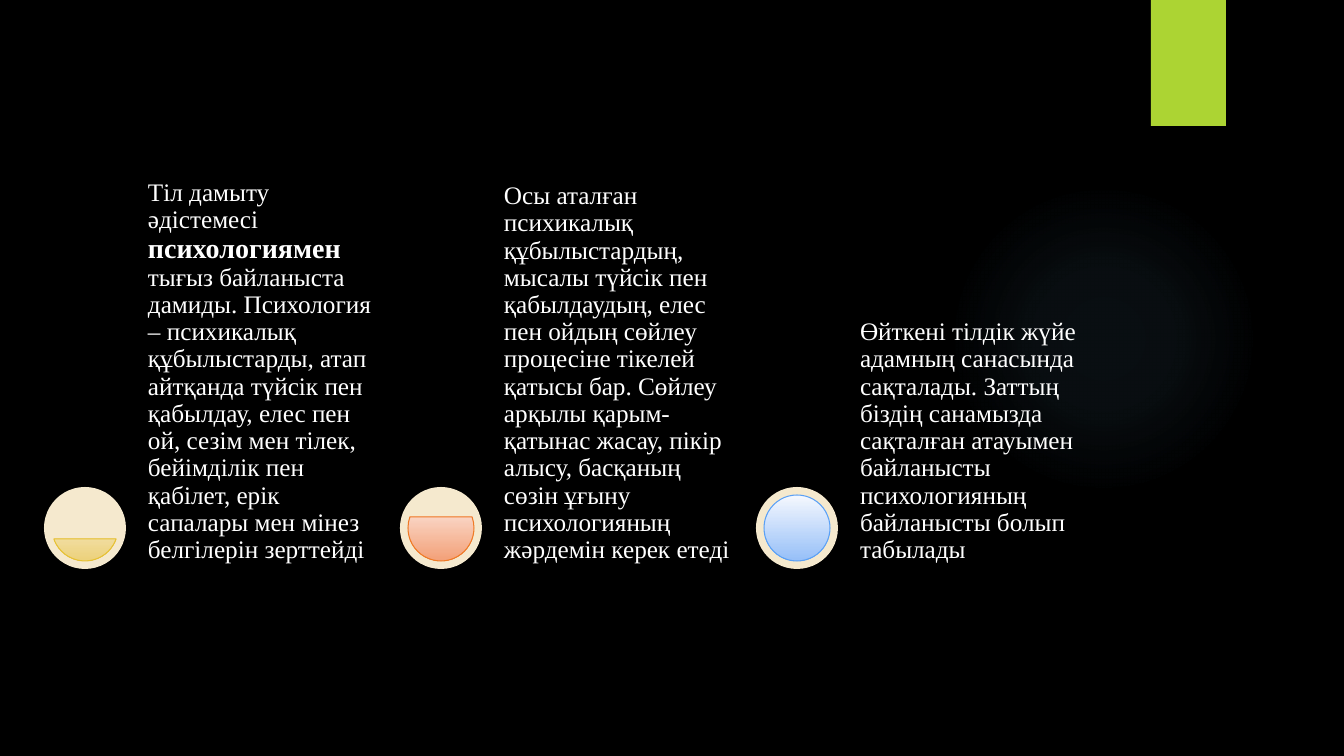
from math import asin, degrees

from pptx import Presentation
from pptx.dml.color import RGBColor
from pptx.enum.shapes import MSO_SHAPE as Shape
from pptx.enum.text import MSO_ANCHOR as Anchor
from pptx.oxml import parse_xml
from pptx.oxml.ns import nsdecls
from pptx.util import Pt

EMU_PER_PX = 914400 / 100.8

THEME = {
    "background": "000000", "accent": "ACD433", "glow": "7AC4F0",
    "disc": "F5E9CE", "text": "FFFFFF",
    "font": "Times New Roman", "body": 18, "strong": 20, "line": 0.75,
}

# level filled, gradient top, gradient bottom, outline, runs as (text, strong)
COLUMNS = [
    (1 / 3, "FAF4E5", "ECD17B", "E6C133", [
        ("Тіл дамыту әдістемесі ", False),
        ("психологиямен", True),
        (" тығыз байланыста дамиды. Психология – психикалық құбылыстарды, "
         "атап айтқанда түйсік пен қабылдау, елес пен ой, сезім мен тілек, "
         "бейімділік пен қабілет, ерік сапалары мен мінез белгілерін зерттейді", False),
    ]),
    (2 / 3, "FCEDE7", "F3A078", "EF7A24", [
        ("Осы аталған психикалық құбылыстардың, мысалы түйсік пен қабылдаудың, "
         "елес пен ойдың сөйлеу процесіне тікелей қатысы бар. Сөйлеу арқылы "
         "қарым-қатынас жасау, пікір алысу, басқаның сөзін ұғыну психологияның "
         "жәрдемін керек етеді", False),
    ]),
    (1, "F5F8FE", "96BFF8", "5AA0F5", [
        ("Өйткені тілдік жүйе адамның санасында сақталады. Заттың біздің "
         "санамызда сақталған атауымен байланысты психологияның байланысты "
         "болып табылады", False),
    ]),
]

LEFT, TOP, PITCH = 44, 487, 356
DISC, INSET = 82, 8
TEXT_OFFSET, TEXT_WIDTH = 99, 241


def px(*lengths):
    return [round(length * EMU_PER_PX) for length in lengths]


def add_plain_shape(kind, left, top, width, height, color):
    shape = page.shapes.add_shape(kind, *px(left, top, width, height))
    shape.shadow.inherit = False
    shape.line.fill.background()
    shape.fill.solid()
    shape.fill.fore_color.rgb = RGBColor.from_string(color)
    return shape


deck = Presentation()
deck.slide_width, deck.slide_height = px(1344, 756)
page = deck.slides.add_slide(deck.slide_layouts[6])
page.background.fill.solid()
page.background.fill.fore_color.rgb = RGBColor.from_string(THEME["background"])

# Faint radial glow and the corner tab
glow = add_plain_shape(Shape.OVAL, 949, 184, 310, 310, THEME["glow"])
stops = "".join(
    f'<a:gs pos="{position * 1000}"><a:srgbClr val="{THEME["glow"]}">'
    f'<a:alpha val="{alpha * 1000}"/></a:srgbClr></a:gs>'
    for position, alpha in [(0, 7), (36, 6), (69, 0)])
radial = parse_xml(
    f'<a:gradFill {nsdecls("a")} rotWithShape="1"><a:gsLst>{stops}</a:gsLst>'
    '<a:path path="circle"><a:fillToRect l="50000" t="50000" r="50000" b="50000"/>'
    '</a:path></a:gradFill>')
solid = glow.element.spPr.find("{*}solidFill")
solid.getparent().replace(solid, radial)
add_plain_shape(Shape.RECTANGLE, 1151, 0, 75, 126, THEME["accent"])

# Discs that fill up step by step, each with its text
for index, (level, light, dark, outline, runs) in enumerate(COLUMNS):
    left = LEFT + index * PITCH
    add_plain_shape(Shape.OVAL, left, TOP, DISC, DISC, THEME["disc"])

    size = DISC - 2 * INSET
    liquid = add_plain_shape(Shape.CHORD, left + INSET, TOP + INSET, size, size, dark)
    start = degrees(asin(1 - 2 * level))
    for side, angle in enumerate([start, 180 - start]):
        liquid.adjustments[side] = angle % 360 * 0.6
    liquid.fill.gradient()
    liquid.fill.gradient_angle = 270
    for stop, color in zip(liquid.fill.gradient_stops, [light, dark]):
        stop.color.rgb = RGBColor.from_string(color)
    liquid.line.color.rgb = RGBColor.from_string(outline)
    liquid.line.width = Pt(THEME["line"])

    box = page.shapes.add_textbox(*px(left + TEXT_OFFSET, TOP, TEXT_WIDTH, DISC))
    frame = box.text_frame
    frame.word_wrap = True
    frame.vertical_anchor = Anchor.BOTTOM
    (frame.margin_left, frame.margin_top,
     frame.margin_right, frame.margin_bottom) = px(5, 5, 5, 5)
    para = frame.paragraphs[0]
    para.line_spacing = 0.9
    for text, strong in runs:
        span = para.add_run()
        span.text = text
        span.font.name = THEME["font"]
        span.font.size = Pt(THEME["strong" if strong else "body"])
        span.font.bold = strong
        span.font.color.rgb = RGBColor.from_string(THEME["text"])

deck.save("out.pptx")
